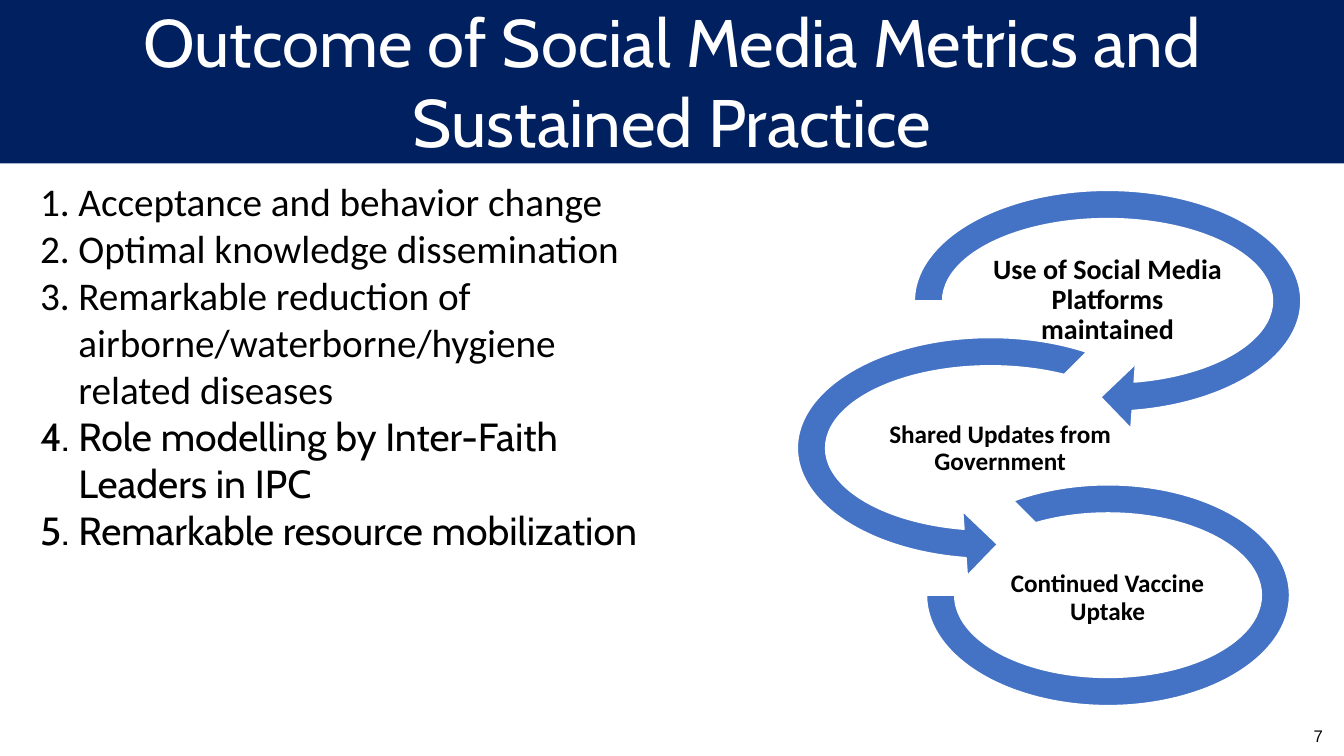
from lxml.etree import SubElement
from pptx import Presentation
from pptx.dml.color import RGBColor
from pptx.enum.shapes import MSO_SHAPE
from pptx.enum.text import MSO_ANCHOR, PP_ALIGN
from pptx.oxml.ns import qn
from pptx.util import Inches, Pt

TITLE = "Outcome of Social Media Metrics and Sustained Practice"
OUTCOMES = [
    ("Acceptance and behavior change", "Calibri"),
    ("Optimal knowledge dissemination", "Calibri"),
    ("Remarkable reduction of airborne/waterborne/hygiene related diseases", "Calibri"),
    ("Role modelling by Inter-Faith Leaders in IPC", "Cabin"),
    ("Remarkable resource mobilization", "Cabin"),
]
PRACTICES = [
    {
        "label": "Use of Social Media Platforms maintained", "size": 20,
        "label_box": (9.82, 2.46, 2.33, 1.04),
        "loop": MSO_SHAPE.CIRCULAR_ARROW, "loop_box": (8.89, 1.71, 4.19, 2.55),
        "bends": (0.1098, 11.42322, 45, 108, 0.125),
    },
    {
        "label": "Shared Updates from Government", "size": 18,
        "label_box": (8.38, 3.93, 3.08, 1.05),
        "loop": MSO_SHAPE.LEFT_CIRCULAR_ARROW, "loop_box": (7.73, 3.17, 4.19, 2.55),
        "bends": (0.1098, 11.42322, 63, 189, 0.125),
    },
    {
        "label": "Continued Vaccine Uptake", "size": 18,
        "label_box": (9.82, 5.58, 2.33, 0.71),
        "loop": MSO_SHAPE.BLOCK_ARC, "loop_box": (9.19, 4.81, 3.6, 2.19),
        "bends": (135, 108, 0.1274),
    },
]
PAGE = "7"
NAVY, BLUE, WHITE, BLACK, INK = "002060", "4472C4", "FFFFFF", "000000", "050606"


def paint(color_format, color):
    color_format.rgb = RGBColor.from_string(color)


def add_filled(slide, preset, box, color):
    shape = slide.shapes.add_shape(preset, *map(Inches, box))
    shape.shadow.inherit = False
    shape.fill.solid()
    paint(shape.fill.fore_color, color)
    return shape


def set_frame(shape, inset_x, inset_y, anchor):
    frame = shape.text_frame
    frame.word_wrap = True
    frame.vertical_anchor = anchor
    frame.margin_left = frame.margin_right = Inches(inset_x)
    frame.margin_top = frame.margin_bottom = Inches(inset_y)
    return frame


def write(paragraph, text, face, size, color, align, bold=False):
    paragraph.text = text
    paragraph.alignment = align
    font = paragraph.font
    font.name, font.size, font.bold = face, Pt(size), bold
    paint(font.color, color)


def number(paragraph):
    properties = paragraph._p.get_or_add_pPr()
    properties.set("marL", str(Inches(0.38)))
    properties.set("indent", str(-Inches(0.38)))
    SubElement(properties, qn("a:buAutoNum"), type="arabicPeriod")


def add_practice(slide, practice):
    loop = add_filled(slide, practice["loop"], practice["loop_box"], BLUE)
    paint(loop.line.color, WHITE)
    loop.line.width = Pt(1)
    for index, bend in enumerate(practice["bends"]):
        loop.adjustments[index] = bend
    label = slide.shapes.add_textbox(*map(Inches, practice["label_box"]))
    paragraph = set_frame(label, 0.01, 0.01, MSO_ANCHOR.MIDDLE).paragraphs[0]
    write(paragraph, practice["label"], "Calibri", practice["size"], BLACK,
          PP_ALIGN.CENTER, bold=True)
    paragraph.line_spacing = 0.9


def main():
    deck = Presentation()
    deck.slide_width, deck.slide_height = Inches(13.33), Inches(7.5)
    slide = deck.slides.add_slide(deck.slide_layouts[6])

    banner = add_filled(slide, MSO_SHAPE.RECTANGLE, (0, 0, 13.33, 1.62), NAVY)
    banner.line.fill.background()
    heading = set_frame(banner, 0, 0, MSO_ANCHOR.TOP).paragraphs[0]
    write(heading, TITLE, "Cabin", 48, WHITE, PP_ALIGN.CENTER)

    for practice in PRACTICES:
        add_practice(slide, practice)

    outcomes = slide.shapes.add_textbox(*map(Inches, (0.3, 1.71, 6.37, 4.81)))
    frame = set_frame(outcomes, 0.1, 0.05, MSO_ANCHOR.TOP)
    for index, (outcome, face) in enumerate(OUTCOMES):
        paragraph = frame.add_paragraph() if index else frame.paragraphs[0]
        number(paragraph)
        write(paragraph, outcome, face, 28, BLACK, PP_ALIGN.LEFT)

    page = slide.shapes.add_textbox(*map(Inches, (12.61, 7.1, 0.64, 0.4)))
    page_line = set_frame(page, 0.13, 0.07, MSO_ANCHOR.MIDDLE).paragraphs[0]
    write(page_line, PAGE, "Arial", 12, INK, PP_ALIGN.RIGHT)

    deck.save("out.pptx")


if __name__ == "__main__":
    main()
